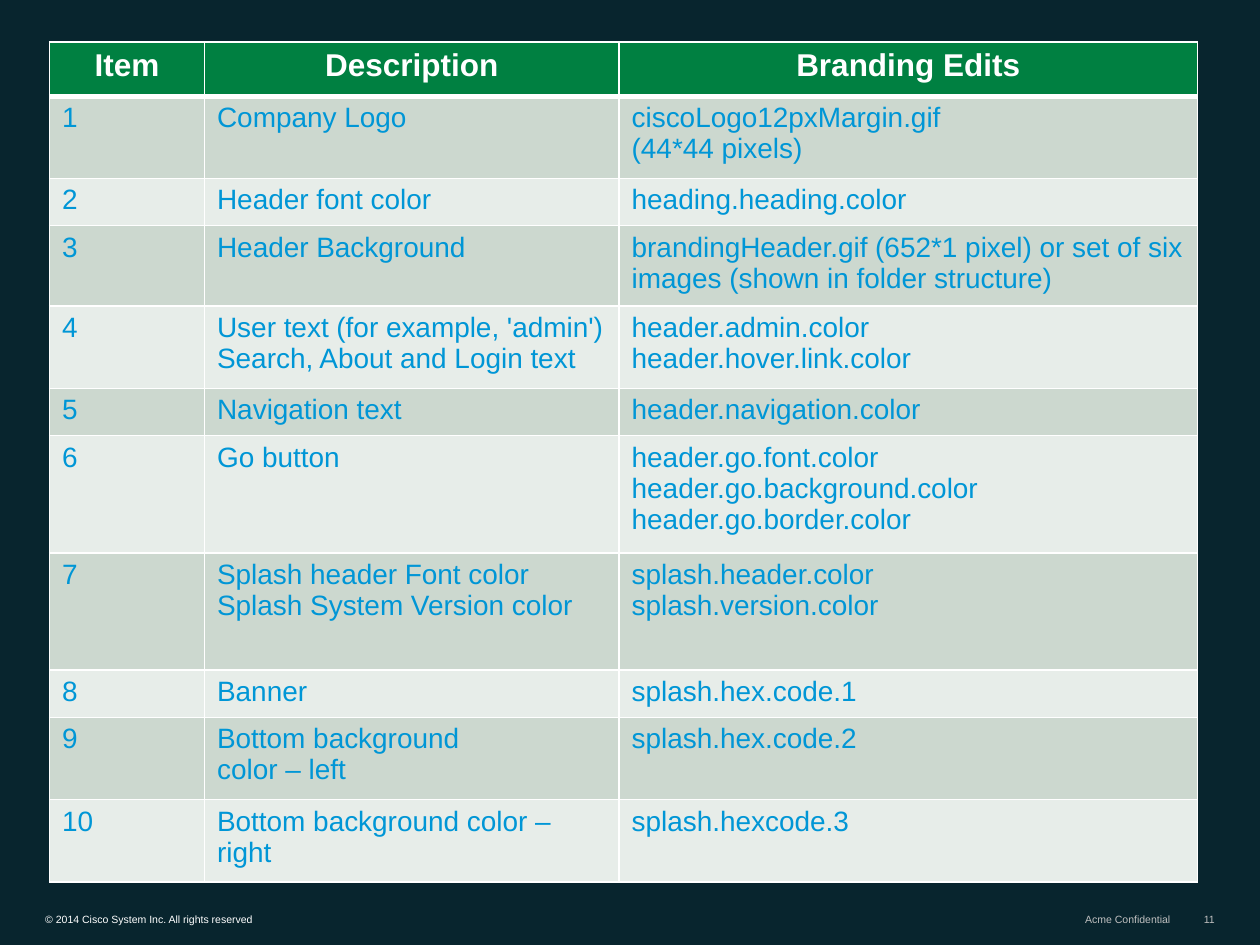
import pptx
import pptx.dml.color
import pptx.enum.text
import pptx.oxml
import pptx.oxml.ns
import pptx.util

Pt = pptx.util.Pt
ALIGN = pptx.enum.text.PP_ALIGN
ANCHOR = pptx.enum.text.MSO_ANCHOR

FONT = "Arial"
WHITE, GREY, BLUE = "FFFFFF", "C0C0C0", "0096D6"
BACKGROUND, HEADER_FILL = "08252E", "008041"
BAND_FILLS = ("CCD8CF", "E7EDE9")

COLUMN_WIDTHS = (88.6, 236.9, 330.5)
HEADER_HEIGHT = 31
HEADINGS = ("Item", "Description", "Branding Edits")
# Each row: height, description, branding edits ("\n" new paragraph, "\v" line break)
ITEMS = (
    (47, "Company Logo", "ciscoLogo12pxMargin.gif\n(44*44 pixels)"),
    (27, "Header font color", "heading.heading.color"),
    (46, "Header Background",
     "brandingHeader.gif (652*1 pixel) or set of six images (shown in folder structure)"),
    (47, "User text (for example, 'admin')\vSearch, About and Login text",
     "header.admin.color\nheader.hover.link.color"),
    (27, "Navigation text", "header.navigation.color"),
    (67, "Go button",
     "header.go.font.color\nheader.go.background.color\nheader.go.border.color"),
    (67, "Splash header Font color\nSplash System Version color",
     "splash.header.color\nsplash.version.color"),
    (27, "Banner", "splash.hex.code.1"),
    (47, "Bottom background\ncolor – left", "splash.hex.code.2"),
    (47, "Bottom background color – right", "splash.hexcode.3"),
)


def color(hex_string):
    return pptx.dml.color.RGBColor.from_string(hex_string)


def write(frame, text, size, hex_string, bold=False, align=ALIGN.LEFT):
    frame.text = text
    for para in frame.paragraphs:
        para.alignment = align
        for span in para.runs:
            span.font.name = FONT
            span.font.size = Pt(size)
            span.font.bold = bold
            span.font.color.rgb = color(hex_string)


def set_borders(cell, widths):
    """Draw white borders; widths maps the sides L, R, T, B to points."""
    properties = cell._tc.get_or_add_tcPr()
    for side, width in widths.items():
        properties.append(pptx.oxml.parse_xml(
            f'<a:ln{side} {pptx.oxml.ns.nsdecls("a")} w="{Pt(width)}">'
            f'<a:solidFill><a:srgbClr val="{WHITE}"/></a:solidFill></a:ln{side}>'))


def add_branding_table(page, left, top):
    heights = [HEADER_HEIGHT] + [item[0] for item in ITEMS]
    table = page.shapes.add_table(
        len(heights), len(COLUMN_WIDTHS), Pt(left), Pt(top),
        Pt(sum(COLUMN_WIDTHS)), Pt(sum(heights))).table
    for column, width in zip(table.columns, COLUMN_WIDTHS):
        column.width = Pt(width)
    rows = [HEADINGS] + [(str(number), *item[1:]) for number, item in enumerate(ITEMS, 1)]
    for index, (texts, height) in enumerate(zip(rows, heights)):
        table.rows[index].height = Pt(height)
        is_header = index == 0
        fill = HEADER_FILL if is_header else BAND_FILLS[(index - 1) % 2]
        borders = {"L": 1, "R": 1, "T": 3 if index == 1 else 1, "B": 3 if is_header else 1}
        for cell, text in zip(table.rows[index].cells, texts):
            set_borders(cell, borders)
            cell.fill.solid()
            cell.fill.fore_color.rgb = color(fill)
            if is_header:
                write(cell.text_frame, text, 18, WHITE, True, ALIGN.CENTER)
            else:
                write(cell.text_frame, text, 16, BLUE)


def add_footer(page, top, height):
    parts = (
        (19.4, 269.3, "© 2014 Cisco System Inc. All rights reserved", WHITE, ALIGN.LEFT),
        (611.3, 64, "Acme Confidential", GREY, ALIGN.RIGHT),
        (680.4, 20.2, "11", GREY, ALIGN.RIGHT),
    )
    for left, width, text, hex_string, align in parts:
        box = page.shapes.add_textbox(Pt(left), Pt(top), Pt(width), Pt(height))
        frame = box.text_frame
        frame.word_wrap = align == ALIGN.LEFT
        frame.vertical_anchor = ANCHOR.BOTTOM
        frame.margin_left = frame.margin_right = Pt(6.5)
        frame.margin_top = frame.margin_bottom = Pt(3)
        write(frame, text, 6, hex_string, align=align)


def main():
    deck = pptx.Presentation()
    deck.slide_width, deck.slide_height = Pt(720), Pt(540)
    page = deck.slides.add_slide(deck.slide_layouts[6])
    page.background.fill.solid()
    page.background.fill.fore_color.rgb = color(BACKGROUND)
    add_footer(page, 518.4, 13.5)
    add_branding_table(page, 28.3, 24)
    deck.save("out.pptx")


if __name__ == "__main__":
    main()
